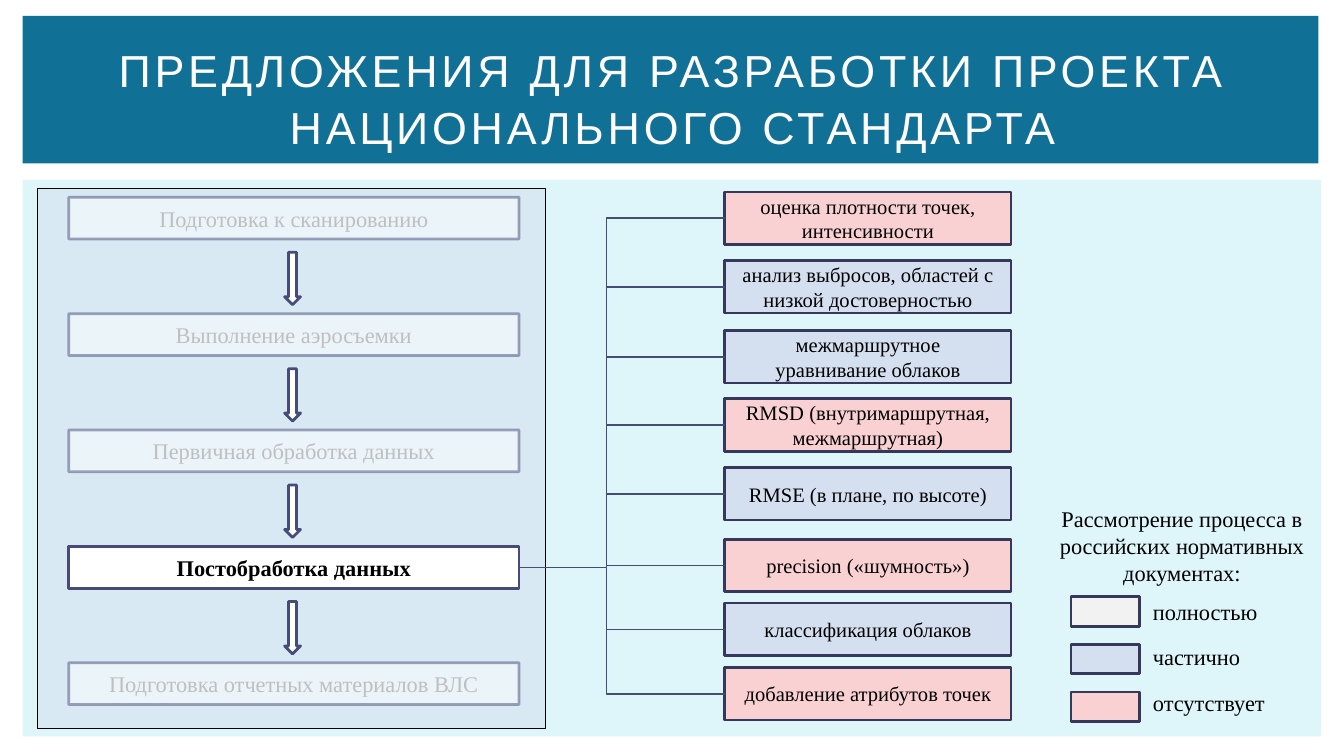
from dataclasses import dataclass

from lxml.etree import SubElement
from pptx import Presentation
from pptx.dml.color import RGBColor
from pptx.enum.shapes import MSO_CONNECTOR as Link, MSO_SHAPE as Preset
from pptx.enum.text import MSO_ANCHOR as Anchor, PP_ALIGN as Align
from pptx.oxml.ns import qn
from pptx.util import Cm, Pt


@dataclass(frozen=True)
class Theme:
    panel: str = "DEF5FA"
    banner: str = "117096"
    frame: str = "D4DFEF"
    white: str = "FFFFFF"
    black: str = "000000"
    faded: str = "BFBFBF"
    flow: str = "474B78"
    outline: str = "35385A"
    full: str = "F2F2F2"
    partial: str = "D4DFEF"
    missing: str = "F9D1D3"
    heading_font: str = "Arial"
    body_font: str = "Times New Roman"
    heading_size: float = 24
    body_size: float = 12
    check_size: float = 11
    border: float = 1.5
    hairline: float = 0.25
    link: float = 0.79


@dataclass(frozen=True)
class Box:
    left: float
    top: float
    width: float
    height: float

    def inner(self, dx, dy, width, height):
        return Box(self.left + dx, self.top + dy, width, height)

    def lengths(self):
        return Cm(self.left), Cm(self.top), Cm(self.width), Cm(self.height)


THEME = Theme()

STAGES = [
    "Подготовка к сканированию",
    "Выполнение аэросъемки",
    "Первичная обработка данных",
    "Постобработка данных",
    "Подготовка отчетных материалов ВЛС",
]
CURRENT_STAGE = "Постобработка данных"

CHECKS = [
    (0, "оценка плотности точек, интенсивности", THEME.missing),
    (1.3, "анализ выбросов, областей с низкой достоверностью", THEME.partial),
    (2.62, "межмаршрутное уравнивание облаков", THEME.partial),
    (3.91, "RMSD (внутримаршрутная, межмаршрутная)", THEME.missing),
    (5.21, "RMSE (в плане, по высоте)", THEME.partial),
    (6.57, "precision («шумность»)", THEME.missing),
    (7.77, "классификация облаков", THEME.partial),
    (8.99, "добавление атрибутов точек", THEME.missing),
]

LEGEND = [
    ("полностью", THEME.full),
    ("частично", THEME.partial),
    ("отсутствует", THEME.missing),
]


def rgb(code):
    return RGBColor.from_string(code)


def fade(fill):
    color = fill._xPr.find(qn("a:solidFill"))[0]
    SubElement(color, qn("a:alpha"), val="50000")


def add_block(slide, box, fill, line=None, width=THEME.border, preset=Preset.RECTANGLE):
    block = slide.shapes.add_shape(preset, *box.lengths())
    block.shadow.inherit = False
    block.fill.solid()
    block.fill.fore_color.rgb = rgb(fill)
    if line:
        block.line.color.rgb = rgb(line)
        block.line.width = Pt(width)
    else:
        block.line.fill.background()
    return block


def write(shape, wording, size=THEME.body_size, color=THEME.black, font=THEME.body_font,
          align=Align.CENTER, anchor=Anchor.MIDDLE, bold=False):
    frame = shape.text_frame
    frame.text = wording
    frame.word_wrap = True
    frame.vertical_anchor = anchor
    paragraph = frame.paragraphs[0]
    paragraph.alignment = align
    letters = paragraph.runs[0].font
    letters.name = font
    letters.size = Pt(size)
    letters.bold = bold
    letters.color.rgb = rgb(color)
    return paragraph


def add_link(slide, start, end, target, bend=None):
    kind = Link.STRAIGHT if bend is None else Link.ELBOW
    link = slide.shapes.add_connector(kind, *start, *end)
    link.line.color.rgb = rgb(THEME.flow)
    link.line.width = Pt(THEME.link)
    link.end_connect(target, 1)
    properties = link._element.spPr
    SubElement(properties, qn("a:effectLst"))
    if bend is not None:
        guides = properties.find(qn("a:prstGeom")).get_or_add_avLst()
        SubElement(guides, qn("a:gd"), name="adj1", fmla=f"val {round(bend * 100000)}")
    return link


def add_heading(slide, box):
    add_block(slide, box, THEME.banner)
    title = slide.shapes.add_textbox(*box.inner(0.64, 0.44, 23.29, 2.18).lengths())
    paragraph = write(title, "ПРЕДЛОЖЕНИЯ ДЛЯ РАЗРАБОТКИ ПРОЕКТА НАЦИОНАЛЬНОГО СТАНДАРТА",
                      THEME.heading_size, THEME.white, THEME.heading_font)
    paragraph.line_spacing = 1.05
    paragraph.runs[0].font._element.set("spc", "200")


def add_stages(slide, box):
    frame = add_block(slide, box, THEME.frame, THEME.black, THEME.hairline)
    fade(frame.fill)
    pitch = 2.2
    for index, name in enumerate(STAGES):
        place = box.inner(0.59, 0.17 + index * pitch, 8.51, 0.79)
        stage = add_block(slide, place, THEME.white, THEME.flow)
        if name == CURRENT_STAGE:
            write(stage, name, bold=True)
            current = stage
        else:
            write(stage, name, color=THEME.faded)
            fade(stage.fill)
            fade(stage.line.fill)
        if index < len(STAGES) - 1:
            arrow = place.inner(4.08, 1.04, 0.3, 0.99)
            add_block(slide, arrow, THEME.white, THEME.flow, preset=Preset.DOWN_ARROW)
    return current


def add_checks(slide, box):
    checks = []
    for offset, name, status in CHECKS:
        check = add_block(slide, box.inner(0, offset, box.width, 0.99), status, THEME.outline)
        write(check, name, THEME.check_size)
        checks.append(check)
    return checks


def add_branches(slide, stage, checks, trunk):
    stage_edge = stage.left + stage.width
    stage_middle = stage.top + stage.height // 2
    ends = [(check.left, check.top + check.height // 2) for check in checks]

    bend = (trunk - stage_edge) / (ends[-1][0] - stage_edge)
    main = add_link(slide, (stage_edge, stage_middle), ends[-1], checks[-1], bend)
    main.begin_connect(stage, 3)
    add_link(slide, (trunk, stage_middle), ends[0], checks[0], 0)
    for check, end in zip(checks[1:-1], ends[1:-1]):
        add_link(slide, (trunk, end[1]), end, check)


def add_legend(slide, box):
    caption = slide.shapes.add_textbox(*box.inner(0, 0, box.width, 1.8).lengths())
    write(caption, "Рассмотрение процесса в российских нормативных документах:",
          anchor=Anchor.TOP)
    for index, (name, status) in enumerate(LEGEND):
        add_block(slide, box.inner(0.53, 1.86 + index * 0.9, 1.3, 0.56), status, THEME.outline)
        label = slide.shapes.add_textbox(
            *box.inner(1.83, 1.76 + index * 0.86, 3.71, 0.76).lengths())
        write(label, name, align=Align.JUSTIFY, anchor=Anchor.TOP)


def main():
    deck = Presentation()
    deck.slide_width, deck.slide_height = Cm(25.4), Cm(14.29)
    slide = deck.slides.add_slide(deck.slide_layouts[6])
    add_block(slide, Box(0.43, 3.4, 24.54, 10.52), THEME.panel)
    add_heading(slide, Box(0.43, 0.3, 24.49, 2.79))
    current = add_stages(slide, Box(0.71, 3.56, 9.6, 10.21))
    checks = add_checks(slide, Box(13.7, 3.63, 5.41, 9.98))
    add_branches(slide, current, checks, Cm(11.46))
    add_legend(slide, Box(19.71, 9.42, 5.26, 4.22))
    deck.save("out.pptx")


if __name__ == "__main__":
    main()
